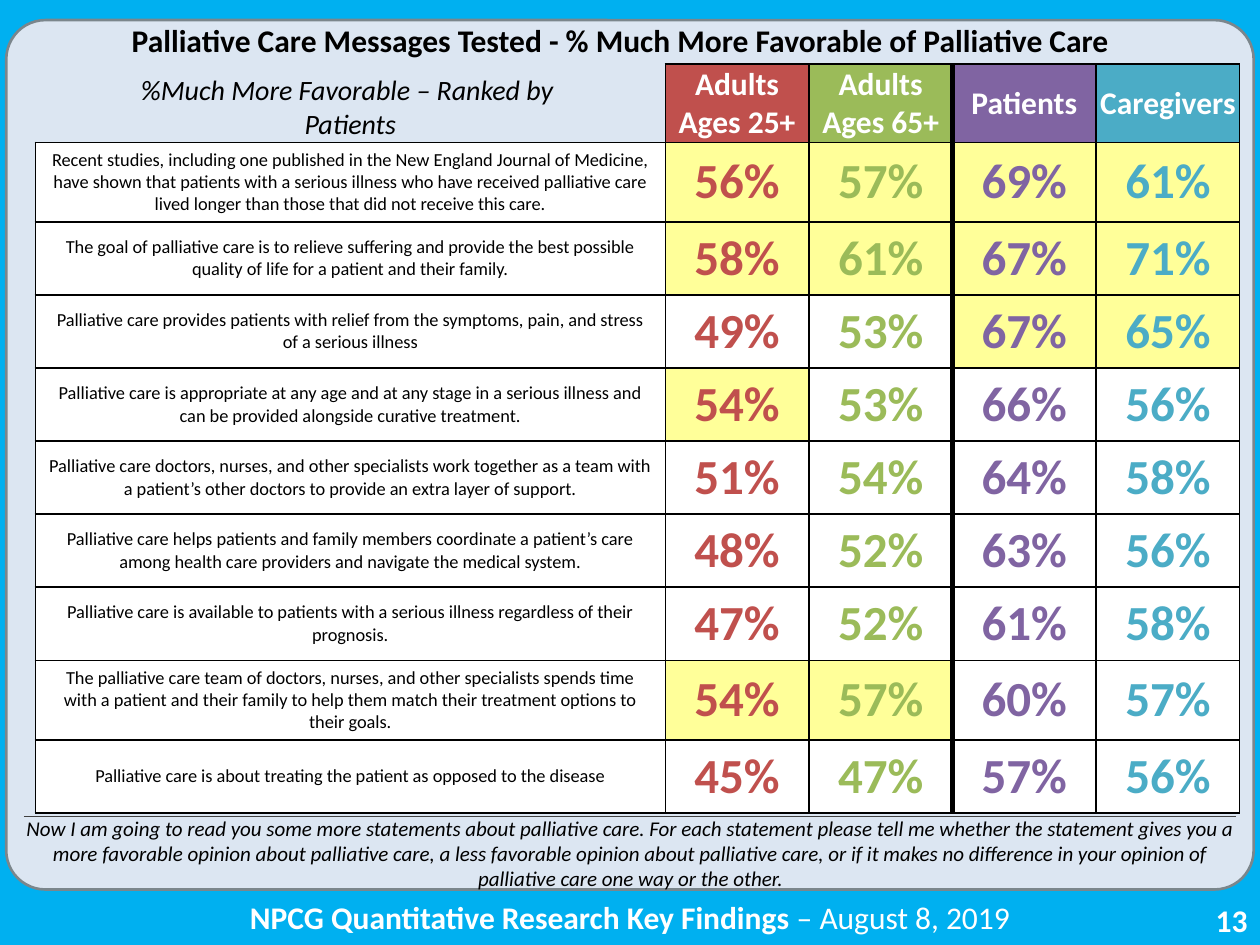
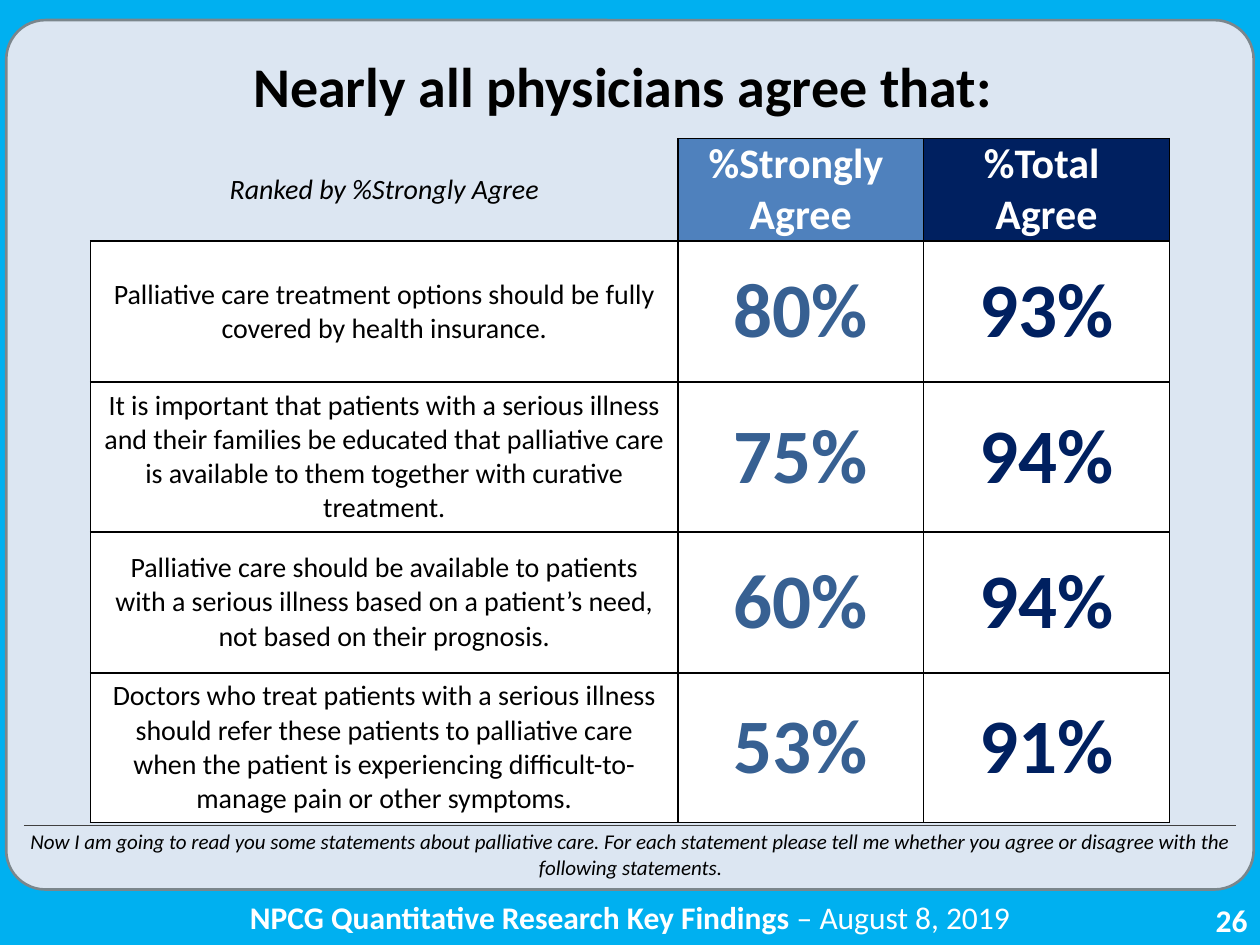
import pptx
import pptx.util
import pptx.dml.color
import pptx.enum.shapes
import pptx.enum.text
import pptx.oxml
import pptx.oxml.ns
import lxml.etree

Inches = pptx.util.Inches
Pt = pptx.util.Pt
RGBColor = pptx.dml.color.RGBColor
Align = pptx.enum.text.PP_ALIGN
Anchor = pptx.enum.text.MSO_ANCHOR
qn = pptx.oxml.ns.qn

# Shared look
FONT = "Calibri"
SKY = RGBColor(0x00, 0xB0, 0xF0)
PANEL = RGBColor(0xDC, 0xE6, 0xF2)
EDGE = RGBColor(0x7B, 0x86, 0x8C)
RULE = RGBColor(0x40, 0x40, 0x40)
BLACK = RGBColor(0x00, 0x00, 0x00)
WHITE = RGBColor(0xFF, 0xFF, 0xFF)
YELLOW = RGBColor(0xFF, 0xFF, 0x99)
RED = RGBColor(0xC0, 0x50, 0x4D)
GREEN = RGBColor(0x9B, 0xBB, 0x59)
PURPLE = RGBColor(0x80, 0x64, 0xA2)
TEAL = RGBColor(0x4B, 0xAC, 0xC6)
BLUE = RGBColor(0x4F, 0x81, 0xBD)
STEEL = RGBColor(0x37, 0x60, 0x92)
NAVY = RGBColor(0x00, 0x20, 0x60)
NO_GRID = "{2D5ABB26-0587-4C30-8999-92F81FD0307C}"

# Message table: statement and the share in each group
GROUPS = [("Adults Ages 25+", RED), ("Adults Ages 65+", GREEN),
          ("Patients", PURPLE), ("Caregivers", TEAL)]
CUTOFFS = (54, 57, 67, 61)  # lowest highlighted share in each group
MESSAGES = [
    ("Recent studies, including one published in the New England Journal of "
     "Medicine, have shown that patients with a serious illness who have received "
     "palliative care lived longer than those that did not receive this care.",
     56, 57, 69, 61),
    ("The goal of palliative care is to relieve suffering and provide the best "
     "possible quality of life for a patient and their family.", 58, 61, 67, 71),
    ("Palliative care provides patients with relief from the symptoms, pain, and "
     "stress of a serious illness", 49, 53, 67, 65),
    ("Palliative care is appropriate at any age and at any stage in a serious "
     "illness and can be provided alongside curative treatment.", 54, 53, 66, 56),
    ("Palliative care doctors, nurses, and other specialists work together as a "
     "team with a patient’s other doctors to provide an extra layer of support.",
     51, 54, 64, 58),
    ("Palliative care helps patients and family members coordinate a patient’s "
     "care among health care providers and navigate the medical system.",
     48, 52, 63, 56),
    ("Palliative care is available to patients with a serious illness regardless "
     "of their prognosis.", 47, 52, 61, 58),
    ("The palliative care team of doctors, nurses, and other specialists spends "
     "time with a patient and their family to help them match their treatment "
     "options to their goals.", 54, 57, 60, 57),
    ("Palliative care is about treating the patient as opposed to the disease",
     45, 47, 57, 56),
]

# Physician table: statement, strongly agree, total agree
LEVELS = [("%Strongly \vAgree", BLUE), ("%Total \vAgree", NAVY)]
VIEWS = [
    ("Palliative care treatment options should be fully covered by health "
     "insurance.", 80, 93),
    ("It is important that patients with a serious illness and their families be "
     "educated that palliative care is available to them together with curative "
     "treatment.", 75, 94),
    ("Palliative care should be available to patients with a serious illness based "
     "on a patient’s need, not based on their prognosis.", 60, 94),
    ("Doctors who treat patients with a serious illness should refer these patients "
     "to palliative care when the patient is experiencing difficult-to-manage pain "
     "or other symptoms.", 53, 91),
]


def style(para, size, color, bold=False, italic=False, align=Align.CENTER):
    para.alignment = align
    font = para.font
    font.name, font.size = FONT, Pt(size)
    font.bold, font.italic = bold, italic
    font.color.rgb = color


def add_text(slide, box, text, size, color, **look):
    frame = slide.shapes.add_textbox(*map(Inches, box)).text_frame
    frame.word_wrap = True
    para = frame.paragraphs[0]
    para.text = text
    style(para, size, color, **look)
    return para


def add_base(deck, number):
    """Start a slide with the background, panel and footer."""
    slide = deck.slides.add_slide(deck.slide_layouts[5])
    slide.background.fill.solid()
    slide.background.fill.fore_color.rgb = SKY
    add_text(slide, (7.75, 7.1, 2.25, 0.4), str(number), 18, WHITE,
             bold=True, align=Align.RIGHT)
    foot = add_text(slide, (0.79, 7.08, 8.42, 0.4),
                    "NPCG Quantitative Research Key Findings ", 18, WHITE)
    foot.runs[0].font.bold = True
    foot.add_run().text = "– August 8, 2019"

    panel = slide.shapes.add_shape(
        pptx.enum.shapes.MSO_SHAPE.ROUNDED_RECTANGLE,
        Inches(0.05), Inches(0.16), Inches(9.9), Inches(6.9))
    panel.adjustments[0] = 0.045
    panel.shadow.inherit = False
    panel.fill.solid()
    panel.fill.fore_color.rgb = PANEL
    panel.line.color.rgb = EDGE
    panel.line.width = Pt(1.5)
    return slide


def set_title(slide, box, text, size):
    title = slide.shapes.title
    title.left, title.top, title.width, title.height = map(Inches, box)
    frame = title.text_frame
    frame.margin_left = frame.margin_right = 0
    frame.margin_top = frame.margin_bottom = 0
    frame.auto_size = pptx.enum.text.MSO_AUTO_SIZE.NONE
    frame.vertical_anchor = Anchor.MIDDLE
    frame.text = text
    style(frame.paragraphs[0], size, BLACK, bold=True)
    # Bring the title in front of the panel
    title.element.getparent().append(title.element)


def add_note(slide, top, high, rule, text):
    add_text(slide, (0.08, top, 9.85, high), text, 12, BLACK, italic=True)
    line = slide.shapes.add_connector(
        pptx.enum.shapes.MSO_CONNECTOR.STRAIGHT,
        Inches(0.19), Inches(rule), Inches(9.81), Inches(rule))
    line.line.color.rgb = RULE
    line.line.width = Pt(0.75)
    props = line.element.find(qn("p:spPr"))
    lxml.etree.SubElement(props, qn("a:effectLst"))


def set_edges(cell, **widths):
    """Draw the borders L, R, T and B in points; zero hides one."""
    props = cell._tc.get_or_add_tcPr()
    for side in "LRTB":
        width = widths.get(side, 1)
        edge = lxml.etree.SubElement(props, qn("a:ln" + side), w=str(Pt(width)))
        if width:
            fill = lxml.etree.SubElement(edge, qn("a:solidFill"))
            lxml.etree.SubElement(fill, qn("a:srgbClr"), val=str(BLACK))
        else:
            lxml.etree.SubElement(edge, qn("a:noFill"))


def fill_cell(cell, text, size, color, fill=None, inset=0, **look):
    if inset is not None:
        cell.margin_left = cell.margin_right = cell.margin_top = Inches(inset)
        cell.margin_bottom = 0
    cell.vertical_anchor = Anchor.MIDDLE
    cell.text = text
    for para in cell.text_frame.paragraphs:
        style(para, size, color, **look)
    if fill is None:
        cell.fill.background()
    else:
        cell.fill.solid()
        cell.fill.fore_color.rgb = fill


def add_grid(slide, spot, cols, rows, thick=None):
    """Add a bordered table; thick is the column with a heavy left edge."""
    frame = slide.shapes.add_table(len(rows), len(cols), *map(
        Inches, (*spot, sum(cols), sum(rows))))
    grid = frame.table
    grid.first_row = grid.horz_banding = False
    grid._tbl.tblPr.find(qn("a:tableStyleId")).text = NO_GRID
    for col, width in zip(grid.columns, cols):
        col.width = Inches(width)
    for row, height in zip(grid.rows, rows):
        row.height = Inches(height)
    for r in range(len(rows)):
        for c in range(len(cols)):
            if r == c == 0:
                set_edges(grid.cell(r, c), L=0, T=0)
            else:
                set_edges(grid.cell(r, c), L=3 if c == thick else 1,
                          R=3 if c + 1 == thick else 1)
    return grid


def fill_grid(grid, corner, heads, data, sizes, colors, inset=0, cutoffs=None):
    """Write the header row, the statements and the shares."""
    head, body, share = sizes
    fill_cell(grid.cell(0, 0), corner, 16, BLACK, italic=True)
    for c, (text, fill) in enumerate(heads, 1):
        fill_cell(grid.cell(0, c), text, head, WHITE, fill, inset, bold=True)
    for r, (text, *values) in enumerate(data, 1):
        fill_cell(grid.cell(r, 0), text, body, BLACK, WHITE, None)
        for c, value in enumerate(values):
            hot = cutoffs and value >= cutoffs[c]
            fill_cell(grid.cell(r, c + 1), f"{value}%", share, colors[c],
                      YELLOW if hot else WHITE, bold=True)


def add_messages(deck):
    slide = add_base(deck, 13)
    set_title(slide, (0, 0.29, 9.85, 0.06), "Palliative Care Messages Tested - "
              "% Much More Favorable of Palliative Care", 18)
    grid = add_grid(slide, (0.28, 0.51), [5] + [1.14] * 4, [0.58] * 10, thick=3)
    fill_grid(grid, "%Much More Favorable – Ranked by \nPatients", GROUPS,
              MESSAGES, (18, 10.5, 28), [color for _, color in GROUPS],
              0.01, CUTOFFS)
    grid.cell(0, 0).vertical_anchor = Anchor.BOTTOM
    add_note(slide, 6.42, 0.71, 6.48,
             "Now I am going to read you some more statements about palliative "
             "care. For each statement please tell me whether the statement gives "
             "you a more favorable opinion about palliative care, a less favorable "
             "opinion about palliative care, or if it makes no difference in your "
             "opinion of palliative care one way or the other.")


def add_views(deck):
    slide = add_base(deck, 26)
    set_title(slide, (0.07, 0.25, 9.85, 0.85),
              "Nearly all physicians agree that: ", 32)
    grid = add_grid(slide, (0.72, 1.1), [4.66, 1.95, 1.95], [0.68] + [1.12] * 4)
    fill_grid(grid, "Ranked by %Strongly Agree", LEVELS, VIEWS, (24, 16, 44),
              [STEEL, NAVY])
    add_note(slide, 6.53, 0.5, 6.55,
             "Now I am going to read you some statements about palliative care. "
             "For each statement please tell me whether you agree or disagree with "
             "the following statements.")


def main():
    deck = pptx.Presentation()
    deck.slide_width, deck.slide_height = Inches(10), Inches(7.5)
    add_messages(deck)
    add_views(deck)
    deck.save("out.pptx")


if __name__ == "__main__":
    main()
